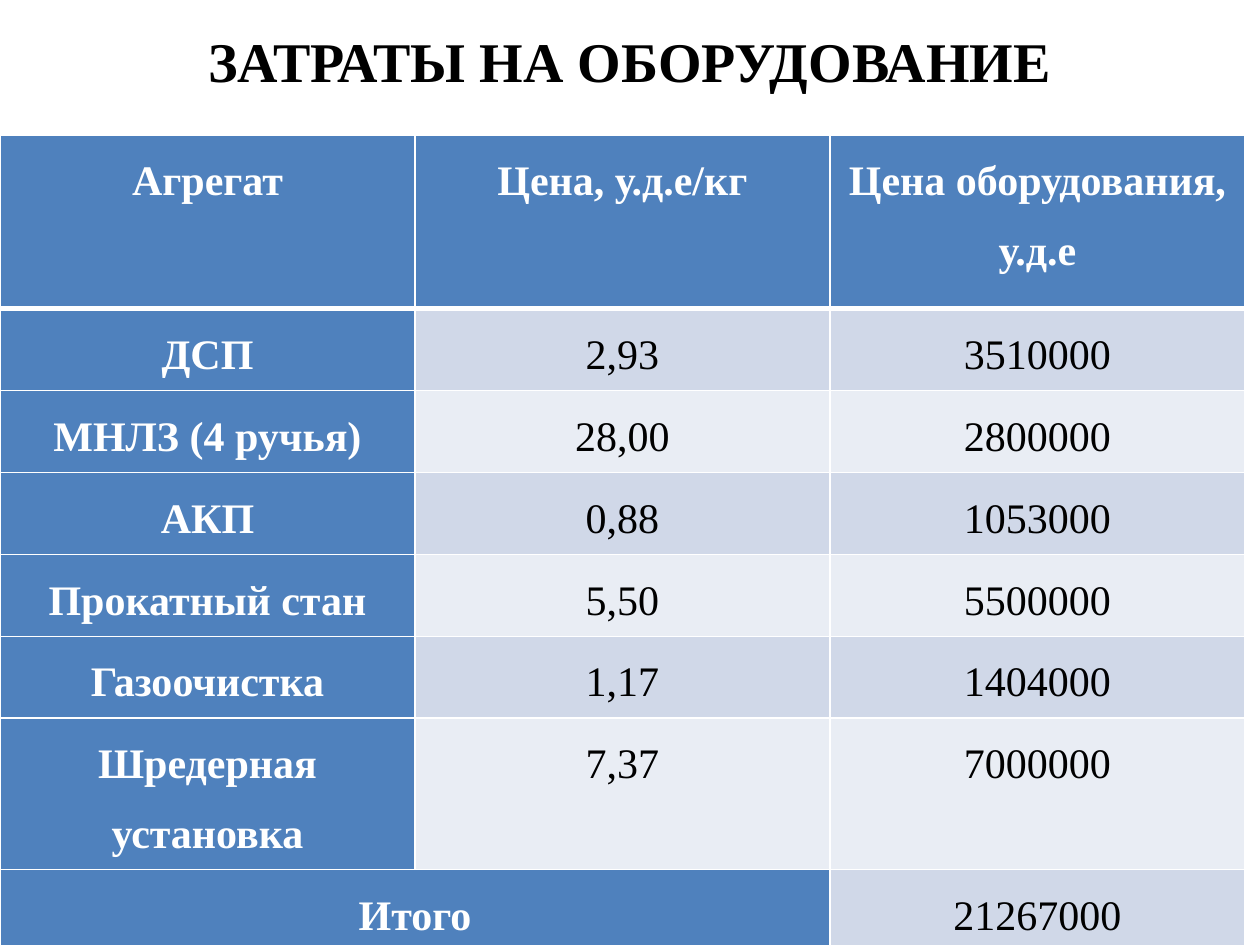
import pptx
import pptx.dml.color
import pptx.enum.text
import pptx.oxml.ns
import pptx.util
from lxml import etree

Inches = pptx.util.Inches
Pt = pptx.util.Pt

HEADERS = ["Агрегат", "Цена, у.д.е/кг", "Цена оборудования, у.д.е"]
EQUIPMENT = [
    ["ДСП", "2,93", "3510000"],
    ["МНЛЗ (4 ручья)", "28,00", "2800000"],
    ["АКП", "0,88", "1053000"],
    ["Прокатный стан", "5,50", "5500000"],
    ["Газоочистка", "1,17", "1404000"],
    ["Шредерная установка", "7,37", "7000000"],
]
TOTAL = ["Итого", "", "21267000"]


def colour(value):
    return pptx.dml.color.RGBColor.from_string(value)


class SlideBuilder:
    font = "Times New Roman"
    white, black, blue = "FFFFFF", "000000", "4F81BD"
    bands = ["D0D8E8", "E9EDF4"]

    def __init__(self, page):
        self.page = page

    def add_text(self, frame, text, size, ink, bold, spacing=1.0):
        para = frame.paragraphs[0]
        para.alignment = pptx.enum.text.PP_ALIGN.CENTER
        para.line_spacing = spacing
        span = para.add_run()
        span.text = text
        values = {"name": self.font, "size": Pt(size), "bold": bold}
        for name, value in values.items():
            setattr(span.font, name, value)
        span.font.color.rgb = colour(ink)

    def title(self, text, left, top, width, height):
        box = self.page.shapes.add_textbox(
            Inches(left), Inches(top), Inches(width), Inches(height))
        frame = box.text_frame
        frame.word_wrap = True
        frame.vertical_anchor = pptx.enum.text.MSO_ANCHOR.MIDDLE
        self.add_text(frame, text, 32, self.black, True)

    def border(self, cell, side, width):
        properties = cell._tc.get_or_add_tcPr()
        tag = pptx.oxml.ns.qn
        line = etree.SubElement(properties, tag(f"a:ln{side}"), w=str(Pt(width)))
        fill = etree.SubElement(line, tag("a:solidFill"))
        etree.SubElement(fill, tag("a:srgbClr"), val=self.white)

    def cell(self, cell, text, row, column):
        heading = row == 0 or column == 0
        margins = {"margin_left": 0.07, "margin_right": 0.07,
                   "margin_top": 0, "margin_bottom": 0}
        for name, value in margins.items():
            setattr(cell, name, Inches(value))
        widths = {"L": 1, "R": 1, "T": 3 if row == 1 else 1, "B": 3 if row == 0 else 1}
        for side, width in widths.items():
            self.border(cell, side, width)
        cell.fill.solid()
        cell.fill.fore_color.rgb = colour(self.blue if heading else self.bands[(row - 1) % 2])
        if text:
            ink = self.white if heading else self.black
            self.add_text(cell.text_frame, text, 24, ink, heading, 1.5)

    def table(self, rows, left, top, width, heights):
        columns = len(rows[0])
        table = self.page.shapes.add_table(
            len(rows), columns, Inches(left), Inches(top),
            Inches(width), Inches(sum(heights))).table
        for column in table.columns:
            column.width = Inches(width / columns)
        for row, height in zip(table.rows, heights):
            row.height = Inches(height)
        for row, texts in enumerate(rows):
            for column, text in enumerate(texts):
                self.cell(table.cell(row, column), text, row, column)
        return table


def main():
    deck = pptx.Presentation()
    deck.slide_width, deck.slide_height = Inches(10), Inches(7.5)
    builder = SlideBuilder(deck.slides.add_slide(deck.slide_layouts[6]))
    builder.title("ЗАТРАТЫ НА ОБОРУДОВАНИЕ", 0, 0.03, 10, 0.89)
    rows = [HEADERS, *EQUIPMENT, TOTAL]
    heights = [1.38] + [0.65] * (len(rows) - 1)
    table = builder.table(rows, 0, 1.07, 9.88, heights)
    last = len(rows) - 1
    table.cell(last, 0).merge(table.cell(last, 1))
    deck.save("out.pptx")


if __name__ == "__main__":
    main()
